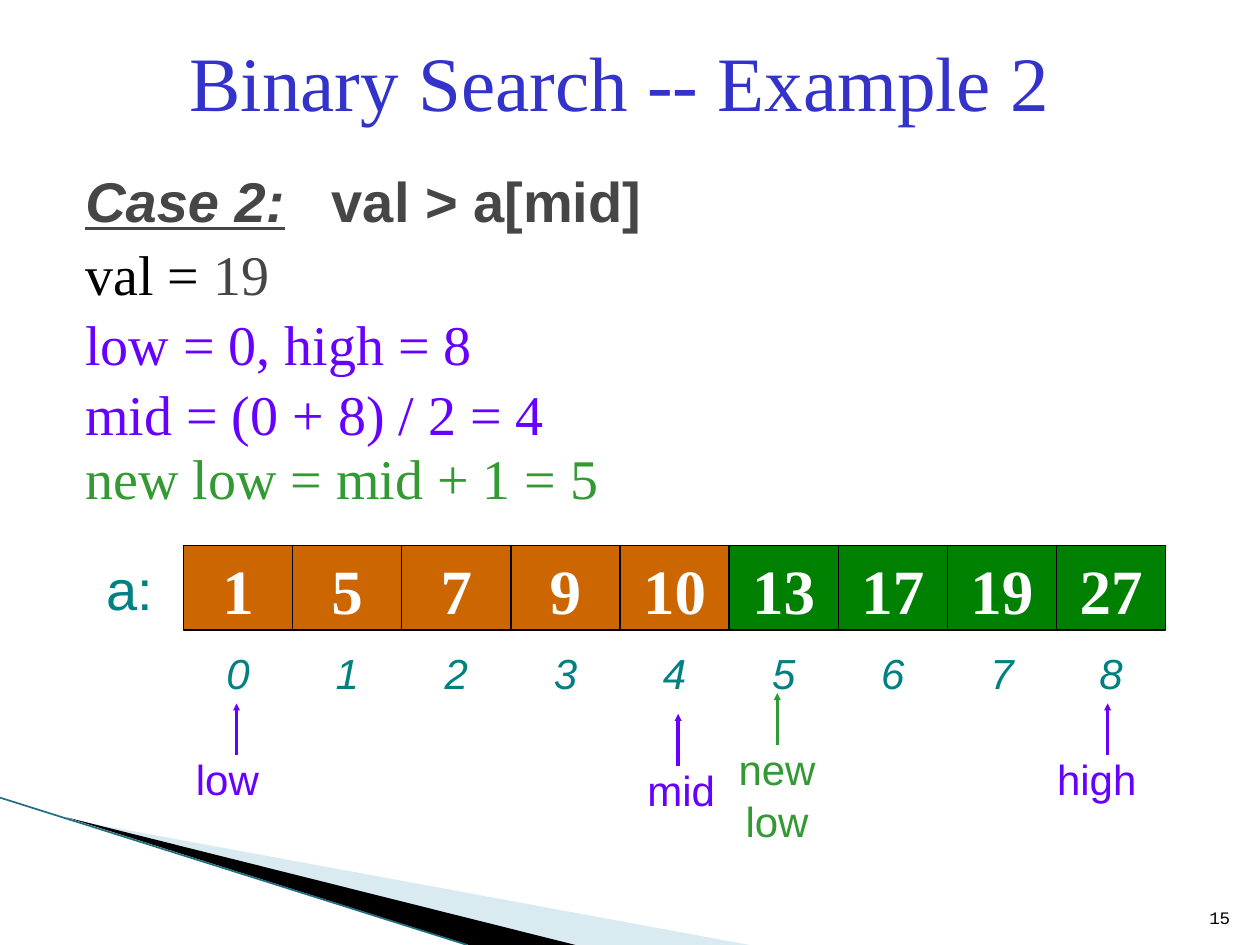
"""Build a slide that walks through the second case of a binary search."""
from lxml.etree import SubElement
from pptx import Presentation
from pptx.dml.color import RGBColor
from pptx.enum.shapes import MSO_CONNECTOR, MSO_SHAPE
from pptx.enum.text import MSO_ANCHOR, PP_ALIGN
from pptx.oxml.ns import qn
from pptx.util import Cm, Pt

BLACK = RGBColor(0x00, 0x00, 0x00)
WHITE = RGBColor(0xFF, 0xFF, 0xFF)
GRAY = RGBColor(0x46, 0x46, 0x46)
BLUE = RGBColor(0x33, 0x33, 0xCC)
VIOLET = RGBColor(0x66, 0x00, 0xFF)
TEAL = RGBColor(0x00, 0x80, 0x80)
LEAF = RGBColor(0x33, 0x99, 0x33)
GREEN = RGBColor(0x00, 0x80, 0x00)
ORANGE = RGBColor(0xCC, 0x66, 0x00)
PALE_BLUE = RGBColor(0xA0, 0xCB, 0xDC)
EDGE_BLUE = RGBColor(0x1F, 0x6E, 0x82)
SERIF, SANS, MONO = "Times New Roman", "Arial", "Courier New"

presentation = Presentation()
presentation.slide_width = Cm(25.4)
presentation.slide_height = Cm(19.05)
slide = presentation.slides.add_slide(presentation.slide_layouts[6])
shapes = slide.shapes


def write(shape, lines, size, font, align=PP_ALIGN.LEFT, anchor=MSO_ANCHOR.TOP,
          wrap=True, bold=None, italic=None):
    frame = shape.text_frame
    frame.word_wrap = wrap
    frame.vertical_anchor = anchor
    for number, line in enumerate(lines):
        paragraph = frame.add_paragraph() if number else frame.paragraphs[0]
        paragraph.alignment = align
        paragraph.line_spacing = 1.04
        for text, color in line:
            run = paragraph.add_run()
            run.text = text
            run.font.name = font
            run.font.size = Pt(size)
            run.font.color.rgb = color
            run.font.bold = bold
            run.font.italic = italic


def draw_line(x1, y1, x2, y2, color, width):
    line = shapes.add_connector(MSO_CONNECTOR.STRAIGHT, Cm(x1), Cm(y1), Cm(x2), Cm(y2))
    line.line.color.rgb = color
    line.line.width = Pt(width)
    SubElement(line._element.spPr, qn("a:effectLst"))
    return line


wedges = [
    (PALE_BLUE, [(1.4, 16.52), (15.11, 19.05), (11.58, 19.05)]),
    (BLACK, [(1.35, 16.48), (11.6, 19.05), (9.45, 19.05)]),
]
for color, corners in wedges:
    points = [(Cm(x), Cm(y)) for x, y in corners]
    builder = shapes.build_freeform(*points[0])
    builder.add_line_segments(points[1:])
    wedge = builder.convert_to_shape()
    wedge.shadow.inherit = False
    wedge.fill.solid()
    wedge.fill.fore_color.rgb = color
    wedge.line.fill.background()
    if color == PALE_BLUE:
        SubElement(wedge._element.spPr.find(".//" + qn("a:srgbClr")), qn("a:alpha"), val="40000")
draw_line(0, 16.08, 9.42, 19.05, EDGE_BLUE, 0.95)

page_number = shapes.add_textbox(Cm(24.03), Cm(17.81), Cm(1.02), Cm(1.02))
write(page_number, [[("15", BLACK)]], 10, MONO, PP_ALIGN.RIGHT, MSO_ANCHOR.BOTTOM)

title = shapes.add_textbox(Cm(1.7), Cm(0.64), Cm(21.59), Cm(1.9))
write(title, [[("Binary Search -- Example 2", BLUE)]], 44, SERIF, PP_ALIGN.CENTER, MSO_ANCHOR.MIDDLE)

case = shapes.add_textbox(Cm(1.47), Cm(3.18), Cm(13.13), Cm(1.6))
case_line = case.text_frame.paragraphs[0]
tabs = SubElement(case_line._p.get_or_add_pPr(), qn("a:tabLst"))
SubElement(tabs, qn("a:tab"), pos=str(Cm(4.97)), algn="l")
write(case, [[("Case 2:", GRAY), ("\tval > a[mid]", GRAY)]], 32, SANS, bold=True)
case_line.runs[0].font.italic = True
case_line.runs[0].font.underline = True

steps = shapes.add_textbox(Cm(1.47), Cm(4.65), Cm(11), Cm(4.32))
write(steps, [
    [("val = ", BLACK), ("19", GRAY)],
    [("low = 0, high = 8", VIOLET)],
    [("mid = (0 + 8) / 2 = 4", VIOLET)],
], 32, SERIF)

new_bound = shapes.add_textbox(Cm(1.47), Cm(8.76), Cm(11.43), Cm(1.6))
write(new_bound, [[("new low = mid + 1 = 5", LEAF)]], 32, SERIF)

array_name = shapes.add_textbox(Cm(1.9), Cm(11), Cm(1.7), Cm(1.6))
write(array_name, [[("a:", TEAL)]], 32, SANS)

values = [1, 5, 7, 9, 10, 13, 17, 19, 27]
new_low = 5
for index, value in enumerate(values):
    left = Cm(3.7 + 2.2 * index)
    cell = shapes.add_shape(MSO_SHAPE.RECTANGLE, left, Cm(11), Cm(2.2), Cm(1.7))
    cell.shadow.inherit = False
    cell.fill.solid()
    cell.fill.fore_color.rgb = GREEN if index >= new_low else ORANGE
    cell.line.color.rgb = BLACK
    cell.line.width = Pt(0.75)
    write(cell, [[(str(value), WHITE)]], 36, SERIF, PP_ALIGN.CENTER, MSO_ANCHOR.MIDDLE, False, bold=True)
    position = shapes.add_textbox(left, Cm(12.7), Cm(2.2), Cm(1.7))
    write(position, [[(str(index), TEAL)]], 24, SANS, PP_ALIGN.CENTER, MSO_ANCHOR.MIDDLE, False, italic=True)

pointers = [
    ("low", 3.7, 15.03, 2.54, 4.77, VIOLET, PP_ALIGN.LEFT),
    ("mid", 12.8, 15.24, 1.9, 13.67, VIOLET, PP_ALIGN.LEFT),
    ("high", 21.06, 15.03, 2.97, 22.33, VIOLET, PP_ALIGN.LEFT),
    ("new low", 14.18, 14.82, 2.97, 15.67, LEAF, PP_ALIGN.CENTER),
]
for name, left, top, width, arrow_x, color, align in pointers:
    label = shapes.add_textbox(Cm(left), Cm(top), Cm(width), Cm(1.27))
    write(label, [[(name, color)]], 24, SANS, align)
    arrow = draw_line(arrow_x, top + 0.2, arrow_x, top - 0.85, color, 2)
    SubElement(arrow.line._get_or_add_ln(), qn("a:tailEnd"), type="triangle", w="sm", len="sm")

presentation.save("out.pptx")
